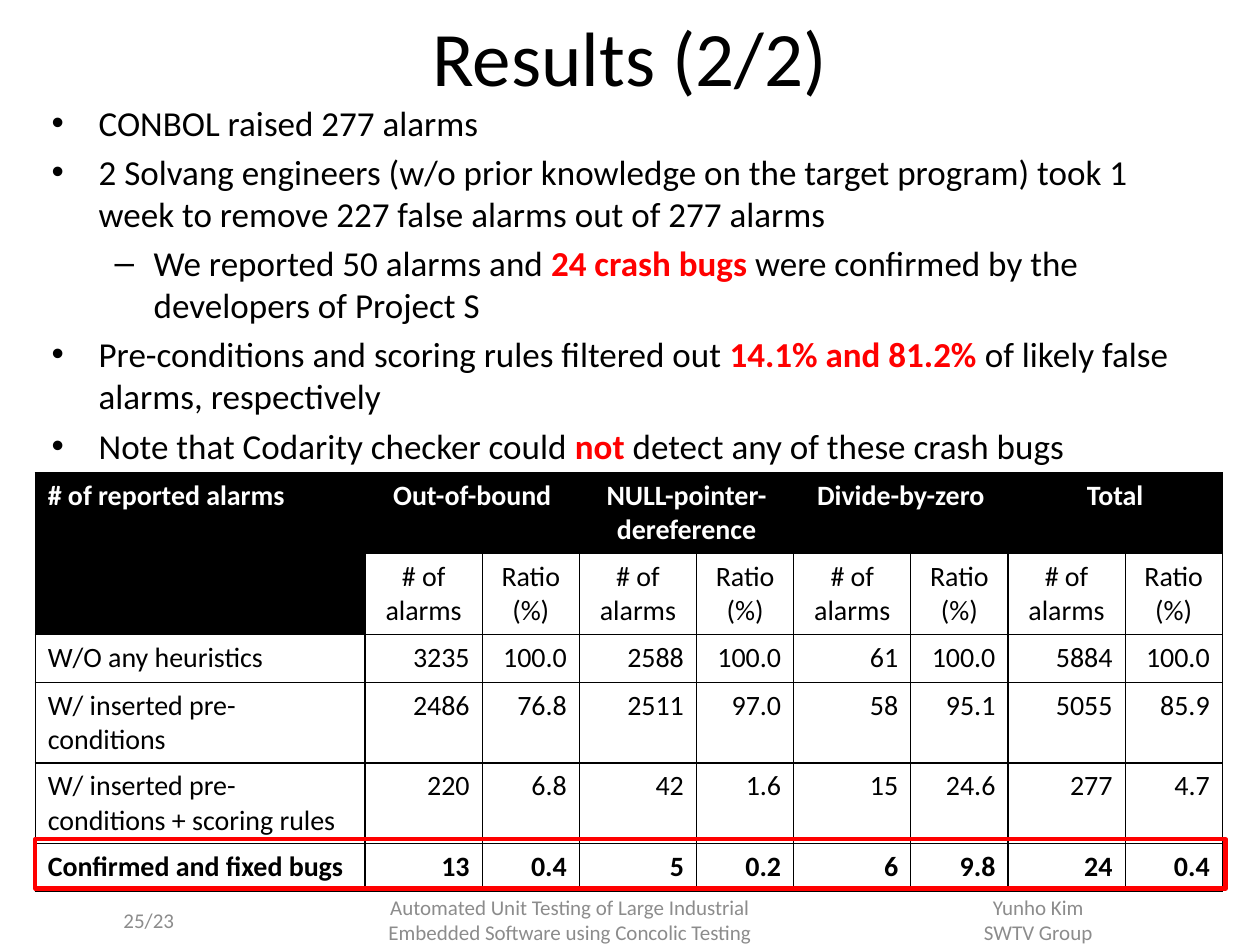
from collections import namedtuple
from dataclasses import dataclass

from lxml import etree
from pptx import Presentation
from pptx import util as u
from pptx.dml import color
from pptx.enum import shapes, text
from pptx.oxml import ns

Box = namedtuple("Box", "left top width height")
ALIGN = text.PP_ALIGN
ANCHOR = text.MSO_ANCHOR


@dataclass(frozen=True)
class Theme:
    font: str = "Calibri"
    ink: str = "000000"
    paper: str = "FFFFFF"
    accent: str = "FF0000"
    muted: str = "8C8C8C"
    title_size: int = 44
    body_size: int = 20
    table_size: int = 16
    footer_size: int = 12


THEME = Theme()

BULLETS = [
    (0, ["CONBOL raised 277 alarms"]),
    (0, ["2 Solvang engineers (w/o prior knowledge on the target program) took 1 "
         "week to remove 227 false alarms out of 277 alarms"]),
    (1, ["We reported 50 alarms and ", "24 crash bugs ",
         "were confirmed by the developers of Project S"]),
    (0, ["Pre-conditions and scoring rules filtered out ", "14.1% and 81.2% ",
         "of likely false alarms, respectively"]),
    (0, ["Note that Codarity checker could ", "not ",
         "detect any of these crash bugs"]),
]
BULLET_STYLES = [("•", 0.95, 0.95), ("–", 2.06, 0.79)]

BUG_TYPES = ["Out-of-bound", "NULL-pointer-dereference", "Divide-by-zero", "Total"]
RESULTS = [
    ("W/O any heuristics",
     "3235", "100.0", "2588", "100.0", "61", "100.0", "5884", "100.0"),
    ("W/ inserted pre-conditions",
     "2486", "76.8", "2511", "97.0", "58", "95.1", "5055", "85.9"),
    ("W/ inserted pre-conditions + scoring rules",
     "220", "6.8", "42", "1.6", "15", "24.6", "277", "4.7"),
    ("Confirmed and fixed bugs",
     "13", "0.4", "5", "0.2", "6", "9.8", "24", "0.4"),
]
LABEL_WIDTH, COUNT_WIDTH, RATIO_WIDTH = 6.65, 2.36, 1.96
ROW_HEIGHTS = [1.63, 1.63, 0.96, 1.63, 1.63, 0.96]


def place(box):
    return [u.Cm(length) for length in box]


def add_run(paragraph, content, *, size, ink=THEME.ink, bold=False):
    run = paragraph.add_run()
    run.text = content
    run.font.name = THEME.font
    run.font.size = u.Pt(size)
    run.font.bold = bold
    run.font.color.rgb = color.RGBColor.from_string(ink)


def write_lines(frame, content, *, align=ALIGN.LEFT, **run_format):
    for index, line in enumerate(content.split("\n")):
        paragraph = frame.add_paragraph() if index else frame.paragraphs[0]
        paragraph.alignment = align
        add_run(paragraph, line, **run_format)


def add_frame(slide, box, anchor):
    frame = slide.shapes.add_textbox(*place(box)).text_frame
    frame.word_wrap = True
    frame.vertical_anchor = anchor
    return frame


def add_text(slide, box, content, *, anchor=ANCHOR.MIDDLE, **line_format):
    write_lines(add_frame(slide, box, anchor), content, **line_format)


def set_bullet(paragraph, symbol, margin, hanging):
    properties = paragraph._p.get_or_add_pPr()
    properties.set("marL", str(u.Cm(margin)))
    properties.set("indent", str(-u.Cm(hanging)))
    etree.SubElement(properties, ns.qn("a:buFont")).set("typeface", "Arial")
    etree.SubElement(properties, ns.qn("a:buChar")).set("char", symbol)


def add_bullets(slide, box):
    frame = add_frame(slide, box, ANCHOR.TOP)
    for index, (level, parts) in enumerate(BULLETS):
        paragraph = frame.add_paragraph() if index else frame.paragraphs[0]
        paragraph.level = level
        if index:
            paragraph.space_before = u.Pt(4)
        set_bullet(paragraph, *BULLET_STYLES[level])
        for position, part in enumerate(parts):
            key = position == 1
            add_run(paragraph, part, size=THEME.body_size, bold=key,
                    ink=THEME.accent if key else THEME.ink)


def set_borders(cell, **widths):
    properties = cell._tc.get_or_add_tcPr()
    for side in "LRTB":
        line = etree.SubElement(properties, ns.qn(f"a:ln{side}"))
        line.set("w", str(u.Pt(widths.get(side, 0.75))))
        fill = etree.SubElement(line, ns.qn("a:solidFill"))
        etree.SubElement(fill, ns.qn("a:srgbClr")).set("val", THEME.ink)


def fill_cell(cell, content, *, header=False, **line_format):
    cell.fill.solid()
    cell.fill.fore_color.rgb = color.RGBColor.from_string(
        THEME.ink if header else THEME.paper)
    if header:
        line_format.update(ink=THEME.paper, bold=True)
    write_lines(cell.text_frame, content, size=THEME.table_size, **line_format)


def add_results_table(slide, box):
    widths = [LABEL_WIDTH] + [COUNT_WIDTH, RATIO_WIDTH] * len(BUG_TYPES)
    table = slide.shapes.add_table(len(ROW_HEIGHTS), len(widths), *place(box)).table
    table.first_row = table.horz_banding = False
    for column, width in zip(table.columns, widths):
        column.width = u.Cm(width)
    for row, height in zip(table.rows, ROW_HEIGHTS):
        row.height = u.Cm(height)
        for index, cell in enumerate(row.cells):
            inner = index < len(widths) - 1
            set_borders(cell, R=1 if index % 2 == 0 and inner else 0.75)

    table.cell(0, 0).merge(table.cell(1, 0))
    fill_cell(table.cell(0, 0), "# of reported alarms", header=True)
    for index, bug_type in enumerate(BUG_TYPES):
        column = 1 + 2 * index
        table.cell(0, column).merge(table.cell(0, column + 1))
        fill_cell(table.cell(0, column), bug_type, header=True, align=ALIGN.CENTER)
        for offset, heading in enumerate(["# of\nalarms", "Ratio\n(%)"]):
            fill_cell(table.cell(1, column + offset), heading, align=ALIGN.CENTER)

    for row, values in enumerate(RESULTS, start=2):
        for column, value in enumerate(values):
            fill_cell(table.cell(row, column), value,
                      align=ALIGN.RIGHT if column else ALIGN.LEFT,
                      bold=row == len(ROW_HEIGHTS) - 1)


def add_highlight(slide, box):
    shape = slide.shapes.add_shape(shapes.MSO_SHAPE.RECTANGLE, *place(box))
    shape.shadow.inherit = False
    shape.fill.background()
    shape.line.color.rgb = color.RGBColor.from_string(THEME.accent)
    shape.line.width = u.Pt(2.5)


def add_footer(slide, box):
    parts = [
        (0, 2.49, "25/23", ALIGN.RIGHT),
        (3.02, 14.4, "Automated Unit Testing of Large Industrial\n"
                     "Embedded Software using Concolic Testing", ALIGN.CENTER),
        (17.78, 3.76, "Yunho Kim\nSWTV Group", ALIGN.CENTER),
    ]
    for offset, width, content, align in parts:
        add_text(slide, Box(box.left + offset, box.top, width, box.height), content,
                 align=align, size=THEME.footer_size, ink=THEME.muted)


def main():
    presentation = Presentation()
    presentation.slide_width = u.Cm(25.4)
    presentation.slide_height = u.Cm(19.05)
    slide = presentation.slides.add_slide(presentation.slide_layouts[6])
    add_text(slide, Box(0, -0.08, 25.4, 2.39), "Results (2/2)",
             align=ALIGN.CENTER, size=THEME.title_size)
    add_bullets(slide, Box(0.79, 1.93, 23.42, 7.59))
    add_footer(slide, Box(1.27, 18.03, 21.54, 1.02))
    add_results_table(slide, Box(0.71, 9.53, 23.93, sum(ROW_HEIGHTS)))
    add_highlight(slide, Box(0.71, 16.92, 24, 0.99))
    presentation.save("out.pptx")


if __name__ == "__main__":
    main()
